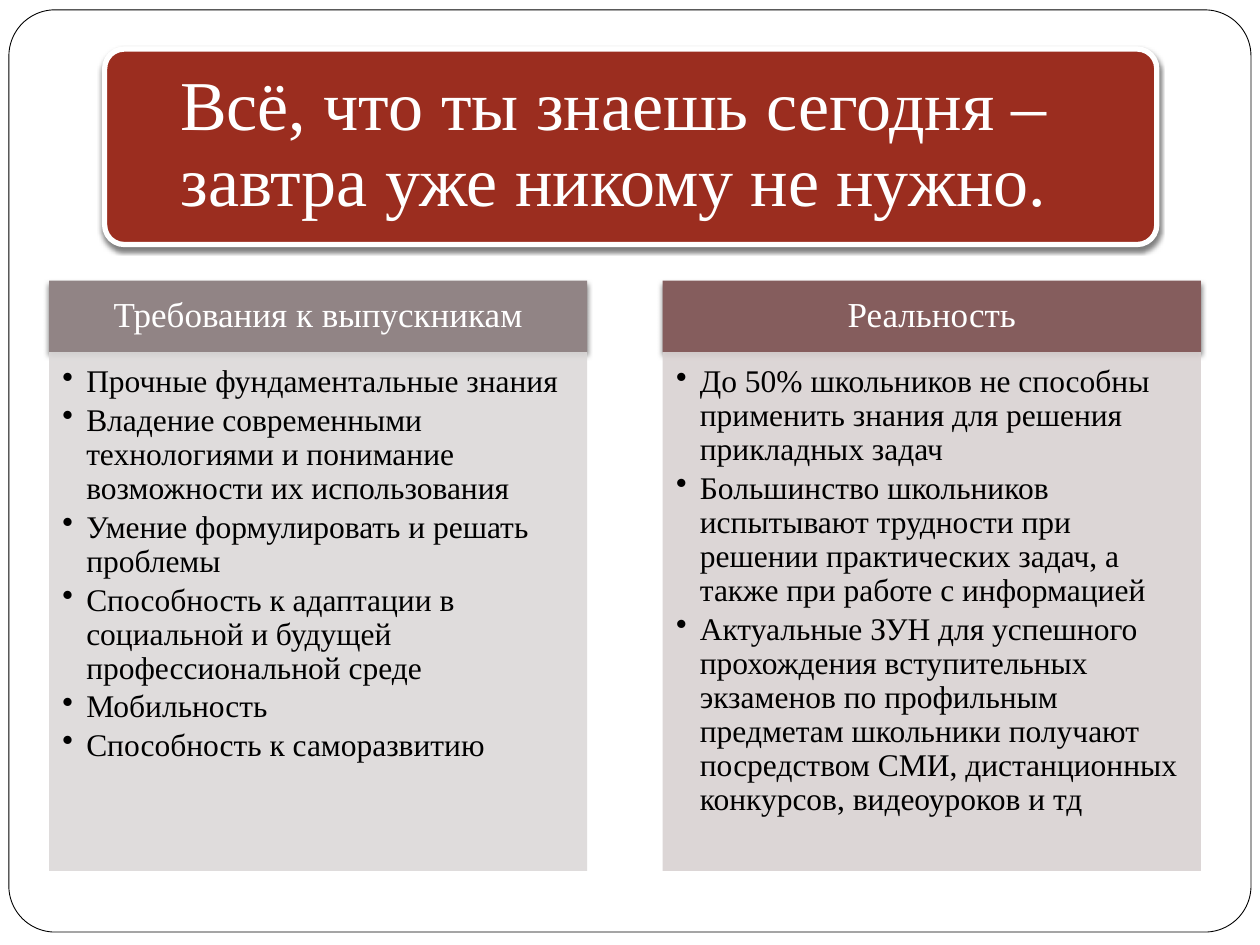
from dataclasses import dataclass

from lxml import etree
from pptx import Presentation
from pptx import util as u
from pptx.dml.color import RGBColor
from pptx.enum import shapes, text
from pptx.oxml import ns


@dataclass(frozen=True)
class Theme:
    font: str = "Times New Roman"
    title_size: int = 40
    heading_size: int = 20
    body_size: int = 18
    white: str = "FFFFFF"
    black: str = "000000"
    plaque: str = "9B2D1F"


@dataclass(frozen=True)
class Box:
    left: float
    top: float
    width: float
    height: float

    def emu(self) -> tuple:
        return tuple(u.Cm(v) for v in (self.left, self.top, self.width, self.height))


@dataclass(frozen=True)
class Column:
    heading: str
    heading_color: str
    body_color: str
    points: tuple


THEME = Theme()
TITLE = "Всё, что ты знаешь сегодня – завтра уже никому не нужно."
FRAME = Box(0.18, 0.2, 25.04, 18.59)
PLAQUE = Box(2.11, 0.99, 21.21, 3.94)
TITLE_AREA = Box(1.5, 1.09, 21.74, 3.71)
COLUMN_LEFT, COLUMN_STEP, COLUMN_WIDTH = 0.99, 12.37, 10.85
HEADING_TOP, HEADING_HEIGHT, BODY_HEIGHT = 5.66, 1.44, 10.46
HANGING_INDENT = 0.48

COLUMNS = (
    Column("Требования к выпускникам", "918485", "DCD9D9", (
        "Прочные фундаментальные знания",
        "Владение современными технологиями и понимание возможности их использования",
        "Умение формулировать и решать проблемы",
        "Способность к адаптации в социальной и будущей профессиональной среде",
        "Мобильность",
        "Способность к саморазвитию",
    )),
    Column("Реальность", "855D5D", "D9D2D2", (
        "До 50% школьников не способны применить знания для решения прикладных задач",
        "Большинство школьников испытывают трудности при решении практических задач, "
        "а также при работе с информацией",
        "Актуальные ЗУН для успешного прохождения вступительных экзаменов по профильным "
        "предметам школьники получают посредством СМИ, дистанционных конкурсов, "
        "видеоуроков и тд",
    )),
)


def add_xml(parent, tag: str, **attributes):
    return etree.SubElement(parent, ns.qn(tag), attributes)


def add_panel(slide, kind, box: Box, fill: str, line: str = "", line_width: float = 0):
    panel = slide.shapes.add_shape(kind, *box.emu())
    panel.shadow.inherit = False
    panel.fill.solid()
    panel.fill.fore_color.rgb = RGBColor.from_string(fill)
    if line:
        panel.line.color.rgb = RGBColor.from_string(line)
        panel.line.width = u.Pt(line_width)
    else:
        panel.line.fill.background()
    return panel


def add_shadow(panel) -> None:
    effects = panel.element.spPr.find(ns.qn("a:effectLst"))
    shadow = add_xml(effects, "a:outerShdw", blurRad=str(u.Pt(3)), dist=str(u.Pt(2)),
                     dir="5400000", rotWithShape="0")
    color = add_xml(shadow, "a:srgbClr", val=THEME.black)
    add_xml(color, "a:alpha", val="50000")


def set_frame(frame, anchor, insets: tuple) -> None:
    frame.word_wrap = True
    frame.auto_size = text.MSO_AUTO_SIZE.NONE
    frame.vertical_anchor = anchor
    (frame.margin_left, frame.margin_top,
     frame.margin_right, frame.margin_bottom) = (u.Cm(v) for v in insets)


def format_paragraph(paragraph, size: int, color: str, align, after: float) -> None:
    paragraph.alignment = align
    paragraph.line_spacing = 0.9
    paragraph.space_before = u.Pt(0)
    paragraph.space_after = u.Pt(size * after)
    paragraph.font.name = THEME.font
    paragraph.font.size = u.Pt(size)
    paragraph.font.color.rgb = RGBColor.from_string(color)


def add_bullet(paragraph) -> None:
    properties = paragraph._p.get_or_add_pPr()
    indent = u.Cm(HANGING_INDENT)
    properties.set("marL", str(indent))
    properties.set("indent", str(-indent))
    add_xml(properties, "a:buChar", char="•")


def add_column(slide, column: Column, left: float) -> None:
    rectangle = shapes.MSO_SHAPE.RECTANGLE

    # Heading bar
    heading = add_panel(slide, rectangle,
                        Box(left, HEADING_TOP, COLUMN_WIDTH, HEADING_HEIGHT),
                        column.heading_color)
    add_shadow(heading)
    set_frame(heading.text_frame, text.MSO_ANCHOR.MIDDLE, (0.4, 0.23, 0.4, 0.23))
    heading.text_frame.text = column.heading
    format_paragraph(heading.text_frame.paragraphs[0], THEME.heading_size, THEME.white,
                     text.PP_ALIGN.CENTER, 0.35)

    # Bulleted body
    body = add_panel(slide, rectangle,
                     Box(left, HEADING_TOP + HEADING_HEIGHT, COLUMN_WIDTH, BODY_HEIGHT),
                     column.body_color)
    fill_color = body.element.spPr.find(f"{ns.qn('a:solidFill')}/{ns.qn('a:srgbClr')}")
    add_xml(fill_color, "a:alpha", val="90000")
    set_frame(body.text_frame, text.MSO_ANCHOR.TOP, (0.27, 0.27, 0.36, 0.4))
    body.text_frame.text = "\n".join(column.points)
    for point in body.text_frame.paragraphs:
        point.level = 1
        format_paragraph(point, THEME.body_size, THEME.black, text.PP_ALIGN.LEFT, 0.15)
        add_bullet(point)


def add_title(slide) -> None:
    plaque = add_panel(slide, shapes.MSO_SHAPE.ROUNDED_RECTANGLE, PLAQUE,
                       THEME.plaque, THEME.white, 3)
    plaque.adjustments[0] = 0.1
    add_shadow(plaque)

    title = slide.shapes.title
    title.left, title.top, title.width, title.height = TITLE_AREA.emu()
    set_frame(title.text_frame, text.MSO_ANCHOR.MIDDLE, (0.19,) * 4)
    title.text_frame.text = TITLE
    format_paragraph(title.text_frame.paragraphs[0], THEME.title_size, THEME.white,
                     text.PP_ALIGN.CENTER, 0.35)
    # The title lies above its plaque
    slide.shapes.element.append(title.element)


def main() -> None:
    deck = Presentation()
    deck.slide_width, deck.slide_height = u.Cm(25.4), u.Cm(19.05)
    slide = deck.slides.add_slide(deck.slide_layouts[5])

    # Page border
    border = add_panel(slide, shapes.MSO_SHAPE.ROUNDED_RECTANGLE, FRAME,
                       THEME.white, THEME.black, 0.5)
    border.adjustments[0] = 0.05

    # Two columns, then the title
    for index, column in enumerate(COLUMNS):
        add_column(slide, column, COLUMN_LEFT + index * COLUMN_STEP)
    add_title(slide)
    deck.save("out.pptx")


if __name__ == "__main__":
    main()
